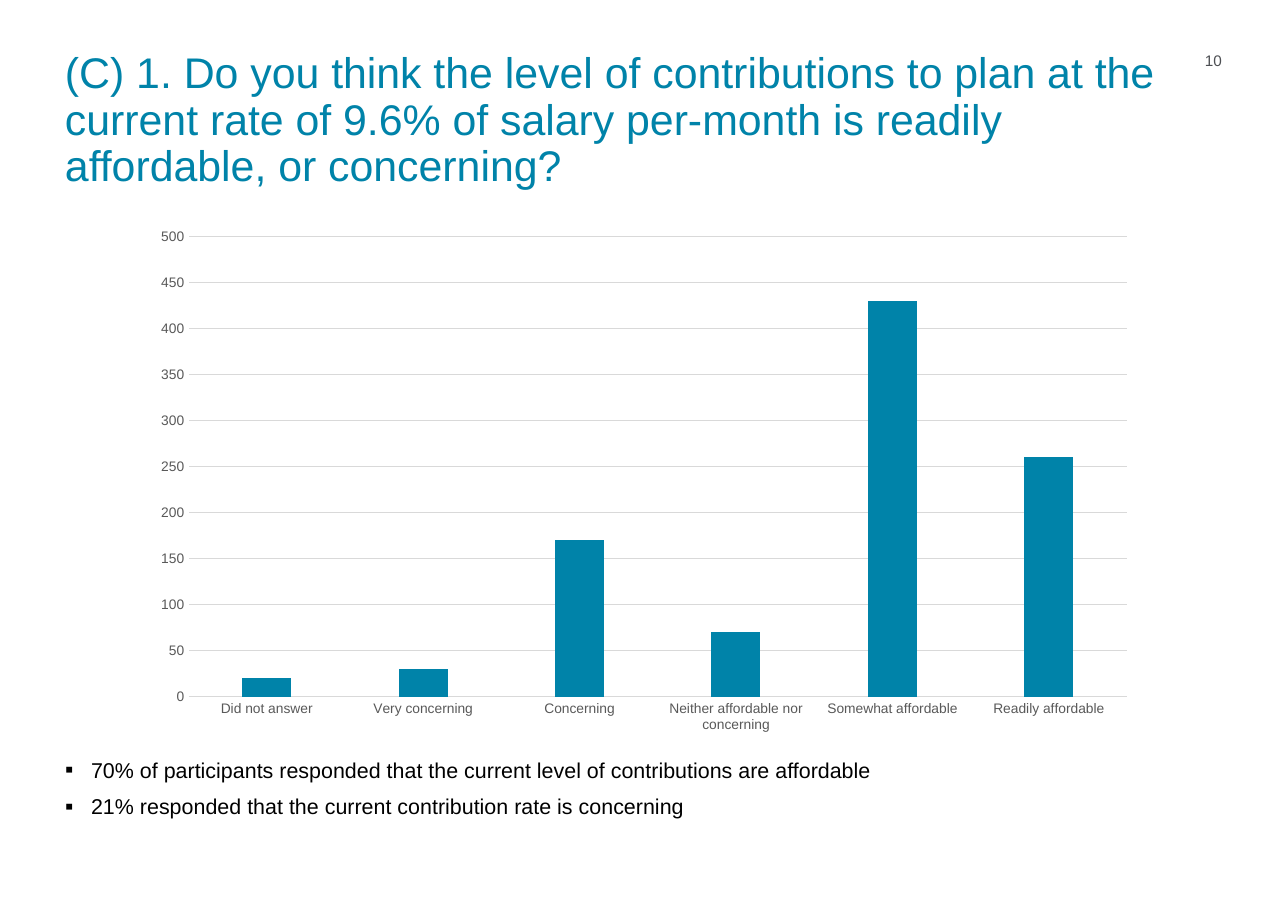
from lxml.etree import SubElement
from pptx import Presentation
from pptx.chart.data import CategoryChartData
from pptx.dml.color import RGBColor
from pptx.enum.chart import XL_CHART_TYPE as ChartType, XL_TICK_MARK as TickMark
from pptx.enum.text import PP_ALIGN as Align
from pptx.oxml.ns import qn
from pptx.util import Pt

TEAL = RGBColor(0x00, 0x83, 0xA9)
BLACK = RGBColor(0x00, 0x00, 0x00)
SLATE = RGBColor(0x4D, 0x4F, 0x53)
LABEL_GREY = RGBColor(0x59, 0x59, 0x59)
GRID_GREY = RGBColor(0xD9, 0xD9, 0xD9)
FONT = "Arial"

deck = Presentation()
deck.slide_width, deck.slide_height = Pt(841.68), Pt(595.44)
page = deck.slides.add_slide(deck.slide_layouts[6])


def add_text(lines, left, top, width, height, size, color,
             align=Align.LEFT, spacing=0.9, gap=0, bullet=None):
    box = page.shapes.add_textbox(Pt(left), Pt(top), Pt(width), Pt(height))
    frame = box.text_frame
    frame.word_wrap = True
    frame.margin_left = frame.margin_right = 0
    frame.margin_top = frame.margin_bottom = 0
    for index, line in enumerate(lines):
        para = frame.add_paragraph() if index else frame.paragraphs[0]
        para.alignment = align
        para.line_spacing = spacing
        if index:
            para.space_before = Pt(gap)
        if bullet:
            props = para._p.get_or_add_pPr()
            props.set("marL", str(Pt(17)))
            props.set("indent", str(-Pt(17)))
            SubElement(props, qn("a:buSzPct"), val="110000")
            SubElement(props, qn("a:buFont"), typeface=FONT)
            SubElement(props, qn("a:buChar"), char=bullet)
        span = para.add_run()
        span.text = line
        span.font.name = FONT
        span.font.size = Pt(size)
        span.font.color.rgb = color


# Findings below the chart
add_text(
    ["70% of participants responded that the current level of contributions are affordable",
     "21% responded that the current contribution rate is concerning"],
    42.5, 494, 756.7, 90, size=14, color=BLACK, spacing=1.05, gap=6, bullet="▪")

# Column chart of responses
responses = CategoryChartData()
responses.categories = ["Did not answer", "Very concerning", "Concerning",
                        "Neither affordable nor concerning",
                        "Somewhat affordable", "Readily affordable"]
responses.add_series("Series 1", [20, 30, 170, 70, 430, 260])
chart = page.shapes.add_chart(ChartType.COLUMN_CLUSTERED, Pt(92.2), Pt(142.6),
                              Pt(657.4), Pt(343.4), responses).chart
chart.has_title = False
chart.has_legend = False
chart.font.name = FONT
chart.font.size = Pt(10)
chart.font.color.rgb = BLACK

plot = chart.plots[0]
plot.gap_width = 219
plot.overlap = -27
plot.vary_by_categories = False
columns = plot.series[0]
columns.format.fill.solid()
columns.format.fill.fore_color.rgb = TEAL

# Axes and gridlines
for axis in (chart.category_axis, chart.value_axis):
    axis.major_tick_mark = axis.minor_tick_mark = TickMark.NONE
    labels = axis.tick_labels.font
    labels.name = FONT
    labels.size = Pt(9)
    labels.color.rgb = LABEL_GREY
chart.value_axis.minimum_scale = 0
chart.value_axis.maximum_scale = 500
chart.value_axis.major_unit = 50
chart.value_axis.format.line.fill.background()
for line in (chart.category_axis.format.line,
             chart.value_axis.major_gridlines.format.line):
    line.color.rgb = GRID_GREY
    line.width = Pt(0.75)

# Title and page number
add_text(
    ["(C) 1. Do you think the level of contributions to plan at the current rate of "
     "9.6% of salary per-month is readily affordable, or concerning?"],
    42.5, 33.8, 728, 60, size=28, color=TEAL)
add_text(["10"], 770.4, 34.6, 28, 14.4, size=10, color=SLATE, align=Align.RIGHT)

deck.save("out.pptx")
